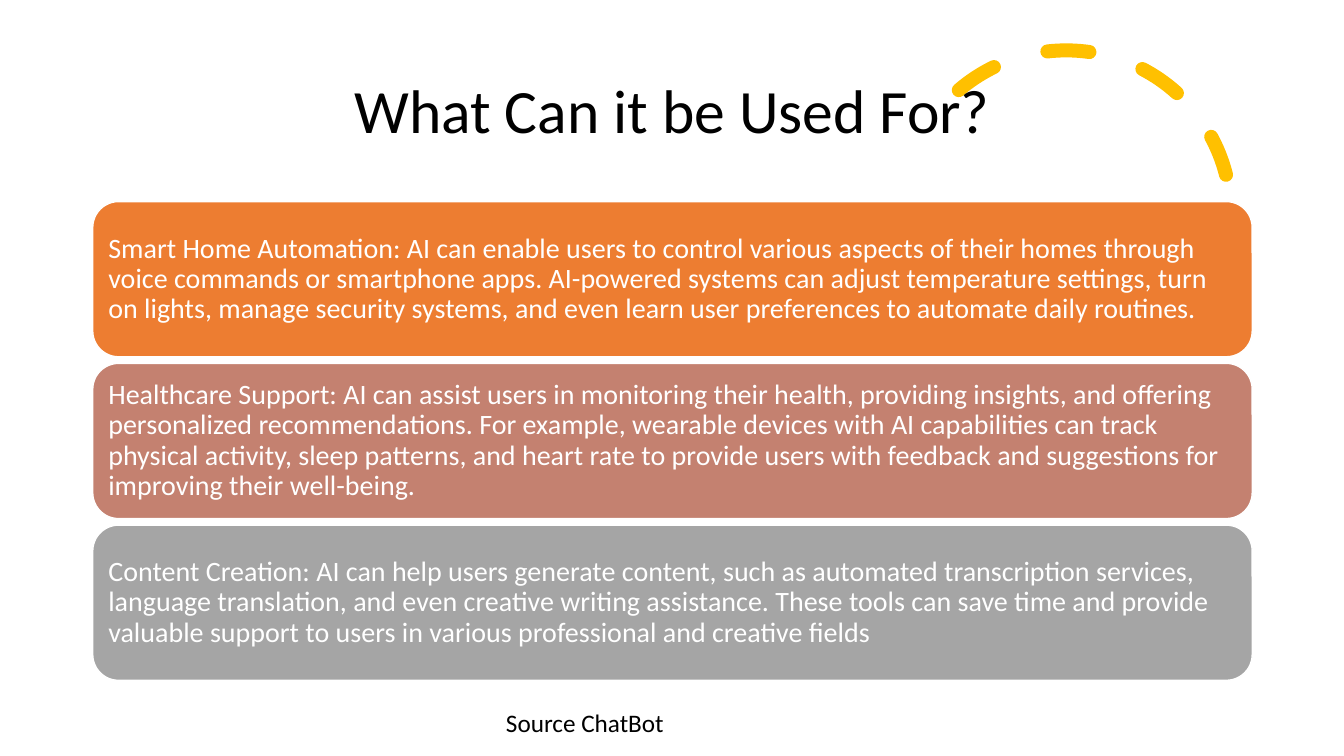
import pptx
import pptx.util
import pptx.dml.color
import pptx.enum.dml
import pptx.enum.shapes
import pptx.enum.text

Inches = pptx.util.Inches
SHAPE = pptx.enum.shapes.MSO_SHAPE
ALIGN = pptx.enum.text.PP_ALIGN
ANCHOR = pptx.enum.text.MSO_ANCHOR
AUTO = pptx.enum.text.MSO_AUTO_SIZE

LEFT, WIDTH = 0.92, 11.5
FIRST_TOP, LAST_TOP, PANEL_HEIGHT = 2, 5.21, 1.54

USES = [
    ("ED7D31", "Smart Home Automation: AI can enable users to control various aspects of "
     "their homes through voice commands or smartphone apps. AI-powered systems can adjust "
     "temperature settings, turn on lights, manage security systems, and even learn user "
     "preferences to automate daily routines."),
    ("C48170", "Healthcare Support: AI can assist users in monitoring their health, providing "
     "insights, and offering personalized recommendations. For example, wearable devices with "
     "AI capabilities can track physical activity, sleep patterns, and heart rate to provide "
     "users with feedback and suggestions for improving their well-being."),
    ("A5A5A5", "Content Creation: AI can help users generate content, such as automated "
     "transcription services, language translation, and even creative writing assistance. "
     "These tools can save time and provide valuable support to users in various "
     "professional and creative fields"),
]


def rgb(color):
    return pptx.dml.color.RGBColor.from_string(color)


def write(tf, text, size=20, color="000000", align=ALIGN.LEFT, anchor=ANCHOR.MIDDLE,
          spacing=0.9, inset=None, auto=AUTO.NONE):
    tf.word_wrap = True
    tf.auto_size = auto
    tf.vertical_anchor = anchor
    if inset is not None:
        tf.margin_left = tf.margin_right = Inches(inset)
        tf.margin_top = tf.margin_bottom = Inches(inset)
    p = tf.paragraphs[0]
    p.alignment = align
    p.line_spacing = spacing
    r = p.add_run()
    r.text = text
    r.font.name = "Calibri"
    r.font.size = pptx.util.Pt(size)
    r.font.color.rgb = rgb(color)


def add_title(s, text):
    sp = s.shapes.title
    sp.left, sp.top = Inches(LEFT), Inches(0.4)
    sp.width, sp.height = Inches(WIDTH), Inches(1.45)
    write(sp.text_frame, text, size=44, align=ALIGN.CENTER)


def add_dashed_arc(s):
    sp = s.shapes.add_shape(SHAPE.ARC, Inches(8.94), Inches(0.5), Inches(3.27), Inches(3.27))
    sp.adjustments[0], sp.adjustments[1] = 146.13, 0
    sp.rotation = 345.8
    sp.shadow.inherit = False
    sp.fill.background()
    sp.line.color.rgb = rgb("FFC000")
    sp.line.width = pptx.util.Pt(10)
    sp.line.dash_style = pptx.enum.dml.MSO_LINE.DASH
    # Round the dash ends and place the arc behind the title
    sp.line._get_or_add_ln().set("cap", "rnd")
    s.shapes._spTree.insert(2, sp._element)


def add_panel(s, top, color, text):
    sp = s.shapes.add_shape(SHAPE.ROUNDED_RECTANGLE, Inches(LEFT), Inches(top),
                            Inches(WIDTH), Inches(PANEL_HEIGHT))
    sp.shadow.inherit = False
    sp.fill.solid()
    sp.fill.fore_color.rgb = rgb(color)
    sp.line.color.rgb = rgb("FFFFFF")
    sp.line.width = pptx.util.Pt(1)
    write(sp.text_frame, text, color="FFFFFF", inset=0.08)


def add_source(s, text):
    sp = s.shapes.add_textbox(Inches(4.92), Inches(6.97), Inches(2.15), Inches(0.4))
    write(sp.text_frame, text, size=18, anchor=ANCHOR.TOP, spacing=1.0,
          auto=AUTO.SHAPE_TO_FIT_TEXT)


def main():
    prs = pptx.Presentation()
    prs.slide_width, prs.slide_height = Inches(13.33), Inches(7.5)
    s = prs.slides.add_slide(prs.slide_layouts[5])

    # Title and its decoration
    add_title(s, "What Can it be Used For?")
    add_dashed_arc(s)

    # Evenly stacked panels
    pitch = (LAST_TOP - FIRST_TOP) / (len(USES) - 1)
    for i, (color, text) in enumerate(USES):
        add_panel(s, FIRST_TOP + i * pitch, color, text)

    # Source line
    add_source(s, "Source ChatBot")

    prs.save("out.pptx")


if __name__ == "__main__":
    main()
